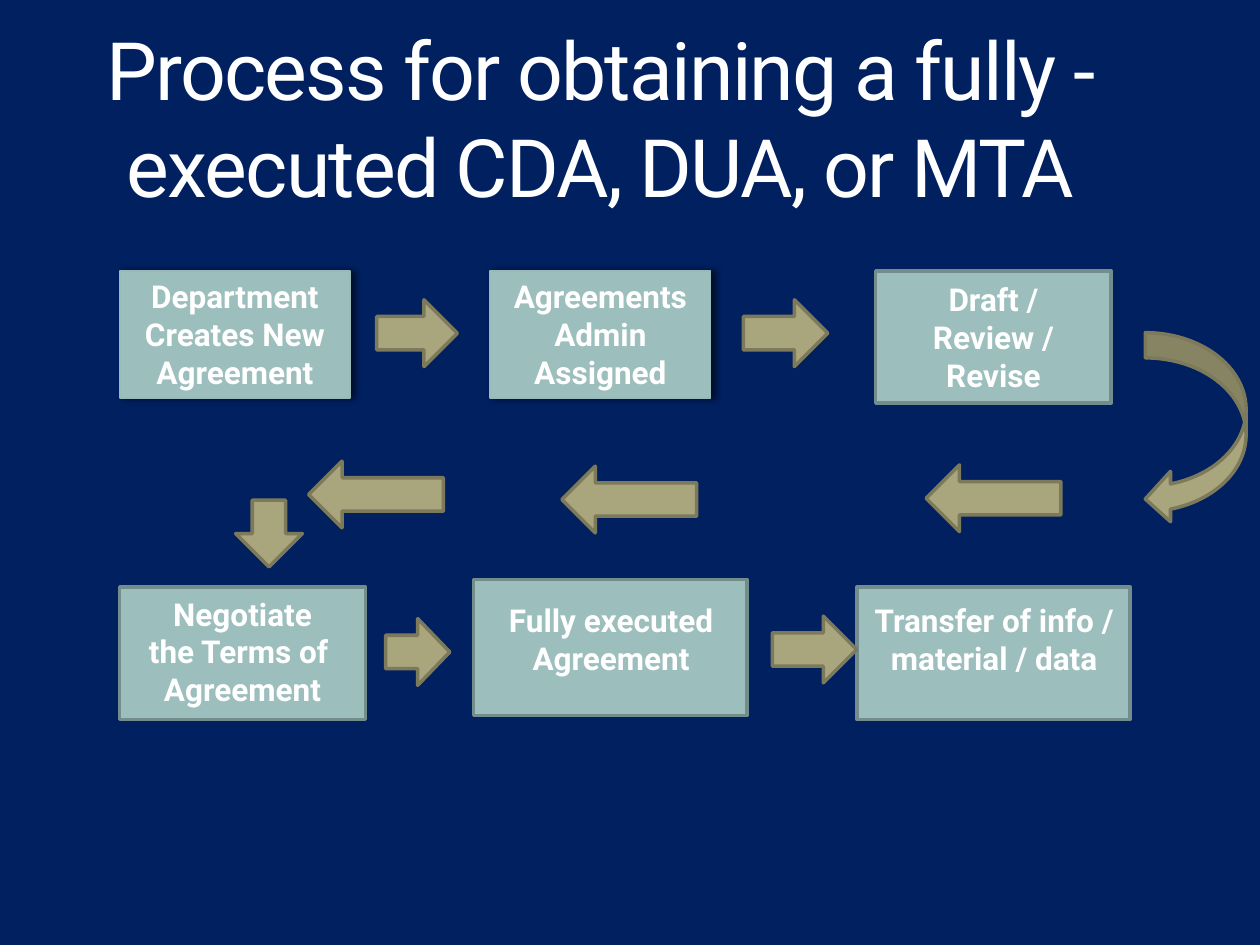
"""Build the agreement process slide."""
from dataclasses import dataclass

from lxml.etree import SubElement
from pptx import Presentation
from pptx.dml.color import RGBColor
from pptx.enum.shapes import MSO_SHAPE
from pptx.enum.text import MSO_ANCHOR, MSO_AUTO_SIZE, PP_ALIGN
from pptx.oxml.ns import qn
from pptx.util import Inches, Pt


@dataclass(frozen=True)
class Theme:
    """Colours, font and type sizes of the slide."""
    background: RGBColor = RGBColor.from_string("002060")
    text: RGBColor = RGBColor.from_string("FFFFFF")
    step: RGBColor = RGBColor.from_string("9CBEBD")
    step_edge: RGBColor = RGBColor.from_string("738D8C")
    raised_edge: RGBColor = RGBColor.from_string("98BBBA")
    arrow: RGBColor = RGBColor.from_string("A9A57C")
    arrow_edge: RGBColor = RGBColor.from_string("7D7A5C")
    font: str = "Roboto"
    title_size: int = 46
    label_size: int = 18


THEME = Theme()
ARROW_WIDTH = 0.53
RETURN_LENGTH = 1.07

RAISED_STEPS = [
    ((0.95, 2.15, 1.83, 1.01), "Department Creates New Agreement"),
    ((3.89, 2.15, 1.75, 1.01), " Agreements \nAdmin Assigned"),
]
DRAFT_STEP = ((6.95, 2.15, 1.87, 1.05), "Draft / Review / Revise")
LABELLED_STEPS = [
    ((6.8, 4.66, 2.17, 1.05), (6.68, 4.72, 2.42, 0.71),
     "Transfer of info / material / data", True),
    ((3.76, 4.6, 2.17, 1.08), (3.7, 4.72, 2.3, 0.7),
     "Fully executed Agreement", True),
    ((0.95, 4.66, 1.95, 1.05), (1.04, 4.67, 1.77, 1.01),
     "Negotiate\nthe Terms of \nAgreement", False),
]
FORWARD_ARROWS = [(2.99, 2.38, 0.64), (5.9, 2.38, 0.67),
                  (3.06, 4.91, 0.51), (6.13, 4.89, 0.67)]
RETURN_ARROWS = [(7.35, 3.69), (4.46, 3.7), (2.45, 3.66)]


def place(box):
    """Convert a left, top, width, height tuple to lengths."""
    return [Inches(value) for value in box]


def write(frame, wording, size, bold=False, anchor=MSO_ANCHOR.TOP):
    """Fill a text frame with centred, themed text."""
    frame.text = wording
    frame.word_wrap = True
    frame.vertical_anchor = anchor
    for paragraph in frame.paragraphs:
        paragraph.alignment = PP_ALIGN.CENTER
        for run in paragraph.runs:
            run.font.name = THEME.font
            run.font.size = Pt(size)
            run.font.bold = bold
            run.font.color.rgb = THEME.text


def add_block(slide, kind, box, fill, edge, edge_width=2):
    """Add a filled, outlined shape without a shadow."""
    block = slide.shapes.add_shape(kind, *place(box))
    block.shadow.inherit = False
    block.fill.solid()
    block.fill.fore_color.rgb = fill
    block.line.color.rgb = edge
    block.line.width = Pt(edge_width)
    return block


def add_step(slide, box, edge=THEME.step_edge, edge_width=2):
    """Add the rectangle of a process step."""
    return add_block(slide, MSO_SHAPE.RECTANGLE, box, THEME.step, edge, edge_width)


def add_raised_step(slide, box, wording):
    """Add a step with its own text and a shadow to the right."""
    step = add_step(slide, box, THEME.raised_edge, 1)
    write(step.text_frame, wording, THEME.label_size, bold=True)
    effects = step._element.spPr.find(qn("a:effectLst"))
    shadow = SubElement(effects, qn("a:outerShdw"), blurRad=str(Pt(4)),
                        dist=str(Pt(2)), dir="0", algn="l", rotWithShape="0")
    tint = SubElement(shadow, qn("a:srgbClr"), val="000000")
    SubElement(tint, qn("a:alpha"), val="60000")


def add_label(slide, box, wording, wraps):
    """Add the text box that names a step."""
    frame = slide.shapes.add_textbox(*place(box)).text_frame
    write(frame, wording, THEME.label_size, bold=True)
    frame.word_wrap = wraps
    frame.auto_size = MSO_AUTO_SIZE.SHAPE_TO_FIT_TEXT


def add_arrow(slide, kind, box):
    """Add a block arrow."""
    add_block(slide, kind, box, THEME.arrow, THEME.arrow_edge)


def add_title(slide):
    """Add the indented, slightly tightened heading."""
    frame = slide.shapes.add_textbox(*place((0, 0.3, 9, 1.25))).text_frame
    write(frame, "Process for obtaining a fully - executed CDA, DUA, or MTA",
          THEME.title_size, anchor=MSO_ANCHOR.MIDDLE)
    heading = frame.paragraphs[0]
    heading._p.get_or_add_pPr().set("marL", str(Inches(0.53)))
    heading.runs[0].font._element.set("spc", "-100")


def main():
    """Assemble and save the slide."""
    deck = Presentation()
    deck.slide_width, deck.slide_height = Inches(10), Inches(7.5)
    slide = deck.slides.add_slide(deck.slide_layouts[6])
    slide.background.fill.solid()
    slide.background.fill.fore_color.rgb = THEME.background

    for step_box, _, _, _ in LABELLED_STEPS:
        add_step(slide, step_box)
    draft_box, draft_wording = DRAFT_STEP
    draft = add_step(slide, draft_box)
    write(draft.text_frame, draft_wording, THEME.label_size, True, MSO_ANCHOR.MIDDLE)
    add_title(slide)
    for _, label_box, wording, wraps in reversed(LABELLED_STEPS):
        add_label(slide, label_box, wording, wraps)
    for box, wording in RAISED_STEPS:
        add_raised_step(slide, box, wording)

    for left, top, length in FORWARD_ARROWS:
        add_arrow(slide, MSO_SHAPE.RIGHT_ARROW, (left, top, length, ARROW_WIDTH))
    add_arrow(slide, MSO_SHAPE.CURVED_LEFT_ARROW, (9.09, 2.64, 0.8, 1.52))
    for left, top in RETURN_ARROWS:
        add_arrow(slide, MSO_SHAPE.LEFT_ARROW, (left, top, RETURN_LENGTH, ARROW_WIDTH))
    add_arrow(slide, MSO_SHAPE.DOWN_ARROW, (1.87, 3.97, ARROW_WIDTH, ARROW_WIDTH))
    deck.save("out.pptx")


if __name__ == "__main__":
    main()
